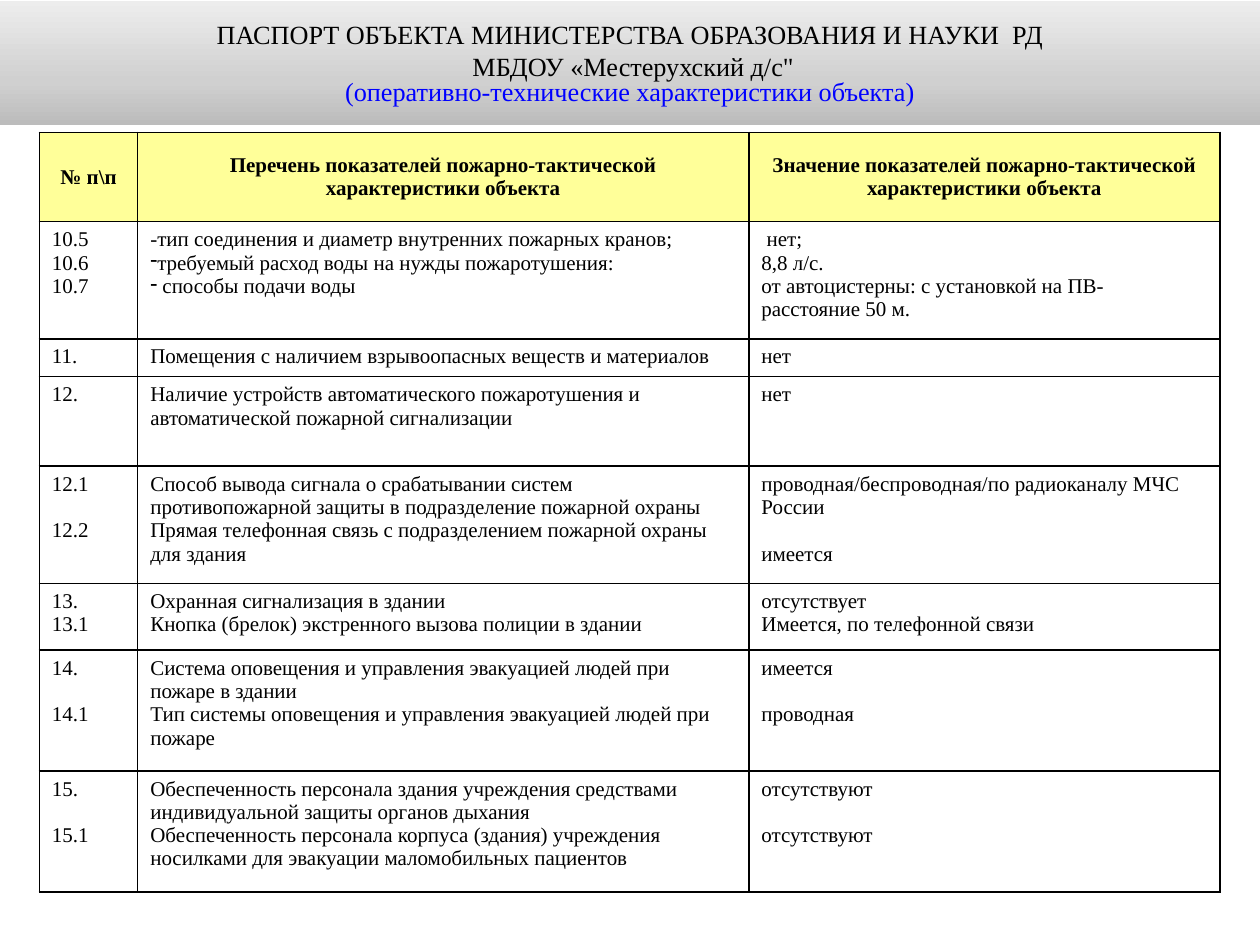
"""Build the fire-safety passport slide with its table of characteristics."""
from copy import deepcopy
from typing import NamedTuple

from lxml.etree import SubElement
from pptx import Presentation
from pptx.dml.color import RGBColor
from pptx.enum.text import MSO_ANCHOR, MSO_AUTO_SIZE, PP_ALIGN
from pptx.oxml.ns import qn
from pptx.util import Pt

FONT = "Times New Roman"
BLACK, BLUE, WHITE, YELLOW = "000000", "0000FF", "FFFFFF", "FFFF99"
LINE_PITCH = 13.4
TITLE_STOPS = [(0, "BCBCBC"), (0.35, "D0D0D0"), (1, "EDEDED")]
COLUMN_WIDTHS = [56.2, 349.2, 269.3]


class Line(NamedTuple):
    text: str
    lines_before: int = 0
    bullet: str = ""


class Row(NamedTuple):
    height: float
    numbers: list[Line]
    indicators: list[Line]
    values: list[Line]


HEADER = Row(
    51.1,
    [Line("№ п\\п")],
    [Line("Перечень показателей пожарно-тактической характеристики объекта")],
    [Line("Значение показателей пожарно-тактической характеристики объекта")],
)
BODY = [
    Row(
        67,
        [Line("10.5"), Line("10.6"), Line("10.7")],
        [
            Line("-тип соединения и диаметр внутренних пожарных кранов;"),
            Line("требуемый расход воды на нужды пожаротушения:", bullet="-"),
            Line(" способы подачи воды", bullet="-"),
        ],
        [
            Line(" нет;"),
            Line("8,8 л/с."),
            Line("от автоцистерны: с установкой на ПВ- расстояние 50 м."),
        ],
    ),
    Row(
        21.6,
        [Line("11.")],
        [Line("Помещения с наличием взрывоопасных веществ и материалов")],
        [Line("нет")],
    ),
    Row(
        51.1,
        [Line("12.")],
        [Line("Наличие устройств автоматического пожаротушения и автоматической пожарной сигнализации")],
        [Line("нет")],
    ),
    Row(
        67,
        [Line("12.1"), Line("12.2", 1)],
        [
            Line("Способ вывода сигнала о срабатывании систем противопожарной защиты в подразделение пожарной охраны"),
            Line("Прямая телефонная связь с подразделением пожарной охраны для здания"),
        ],
        [Line("проводная/беспроводная/по радиоканалу МЧС России"), Line("имеется", 1)],
    ),
    Row(
        38.2,
        [Line("13."), Line("13.1")],
        [
            Line("Охранная сигнализация в здании"),
            Line("Кнопка (брелок) экстренного вызова полиции в здании"),
        ],
        [Line("отсутствует"), Line("Имеется, по телефонной связи")],
    ),
    Row(
        69.1,
        [Line("14."), Line("14.1", 1)],
        [
            Line("Система оповещения и управления эвакуацией людей при пожаре в здании"),
            Line("Тип системы оповещения и управления эвакуацией людей при пожаре"),
        ],
        [Line("имеется"), Line("проводная", 1)],
    ),
    Row(
        69.1,
        [Line("15."), Line("15.1", 1)],
        [
            Line("Обеспеченность персонала здания учреждения средствами индивидуальной защиты органов дыхания"),
            Line("Обеспеченность персонала корпуса (здания) учреждения носилками для эвакуации маломобильных пациентов"),
        ],
        [Line("отсутствуют"), Line("отсутствуют", 1)],
    ),
]


def color(value: str) -> RGBColor:
    return RGBColor.from_string(value)


def format_paragraph(paragraph, size: float, ink: str, bold: bool, align) -> None:
    paragraph.alignment = align
    font = paragraph.font
    font.name, font.size, font.bold = FONT, Pt(size), bold
    font.color.rgb = color(ink)


def set_bullet(paragraph, character: str) -> None:
    properties = paragraph._p.get_or_add_pPr()
    properties.set("marL", "0")
    properties.set("indent", "0")
    SubElement(properties, qn("a:buChar")).set("char", character)


def set_borders(cell, width: float) -> None:
    properties = cell._tc.get_or_add_tcPr()
    for side in ("lnL", "lnR", "lnT", "lnB"):
        border = SubElement(properties, qn(f"a:{side}"), w=str(Pt(width)))
        fill = SubElement(border, qn("a:solidFill"))
        SubElement(fill, qn("a:srgbClr"), val=BLACK)


def fill_cell(cell, lines: list[Line], is_header: bool) -> None:
    set_borders(cell, 1)
    cell.fill.solid()
    cell.fill.fore_color.rgb = color(YELLOW if is_header else WHITE)
    cell.vertical_anchor = MSO_ANCHOR.MIDDLE if is_header else MSO_ANCHOR.TOP
    frame = cell.text_frame
    for index, line in enumerate(lines):
        paragraph = frame.add_paragraph() if index else frame.paragraphs[0]
        paragraph.text = line.text
        if line.lines_before:
            paragraph.space_before = Pt(line.lines_before * LINE_PITCH)
        if line.bullet:
            set_bullet(paragraph, line.bullet)
        align = PP_ALIGN.CENTER if is_header else PP_ALIGN.LEFT
        format_paragraph(paragraph, 12, BLACK, is_header, align)


def add_title(page) -> None:
    title = page.shapes.title
    title.left, title.top, title.width, title.height = Pt(0), Pt(0.5), Pt(720), Pt(70.8)
    title.fill.gradient()
    title.fill.gradient_angle = 90
    stop_list = title._element.spPr.find(".//" + qn("a:gsLst"))
    stop_list.append(deepcopy(stop_list[0]))
    for stop, (position, shade) in zip(title.fill.gradient_stops, TITLE_STOPS):
        stop.position = position
        stop.color.rgb = color(shade)
    frame = title.text_frame
    frame.auto_size = MSO_AUTO_SIZE.NONE
    frame.word_wrap = True
    frame.vertical_anchor = MSO_ANCHOR.MIDDLE
    frame.margin_left = frame.margin_right = Pt(6.5)
    frame.margin_top = frame.margin_bottom = Pt(3.6)
    name = frame.paragraphs[0]
    name.text = "ПАСПОРТ ОБЪЕКТА МИНИСТЕРСТВА ОБРАЗОВАНИЯ И НАУКИ  РД\v МБДОУ «Местерухский д/с\""
    subtitle = frame.add_paragraph()
    subtitle.text = "(оперативно-технические характеристики объекта)"
    subtitle.line_spacing = 0.8
    for paragraph, ink in ((name, BLACK), (subtitle, BLUE)):
        paragraph.space_before = Pt(0)
        format_paragraph(paragraph, 15, ink, False, PP_ALIGN.CENTER)


def add_passport_table(page) -> None:
    rows = [HEADER, *BODY]
    width, height = sum(COLUMN_WIDTHS), sum(row.height for row in rows)
    table = page.shapes.add_table(
        len(rows), len(COLUMN_WIDTHS), Pt(22.5), Pt(75.6), Pt(width), Pt(height)
    ).table
    table.first_row = table.horz_banding = False
    for column, column_width in zip(table.columns, COLUMN_WIDTHS):
        column.width = Pt(column_width)
    for table_row, row in zip(table.rows, rows):
        table_row.height = Pt(row.height)
        for cell, lines in zip(table_row.cells, (row.numbers, row.indicators, row.values)):
            fill_cell(cell, lines, row is HEADER)


def main() -> None:
    deck = Presentation()
    deck.slide_width, deck.slide_height = Pt(720), Pt(540)
    page = deck.slides.add_slide(deck.slide_layouts[5])
    add_title(page)
    add_passport_table(page)
    deck.save("out.pptx")


if __name__ == "__main__":
    main()
